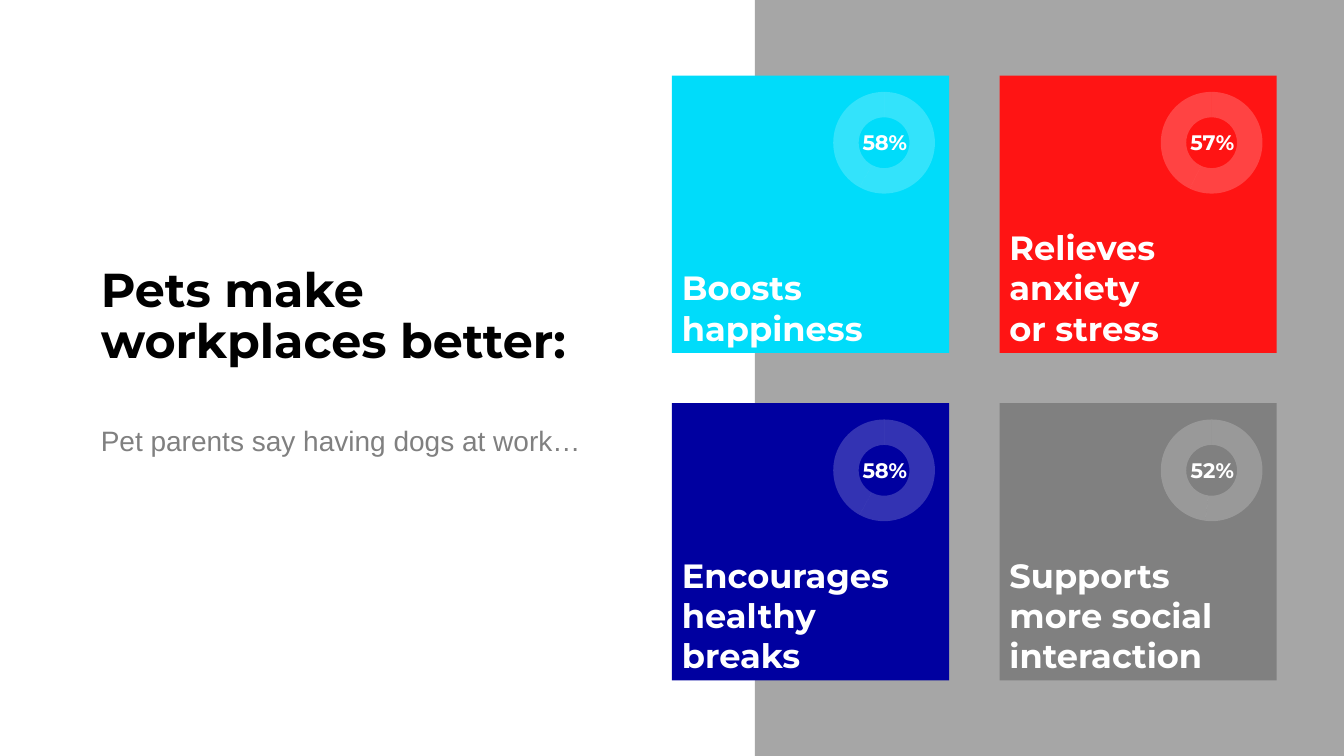
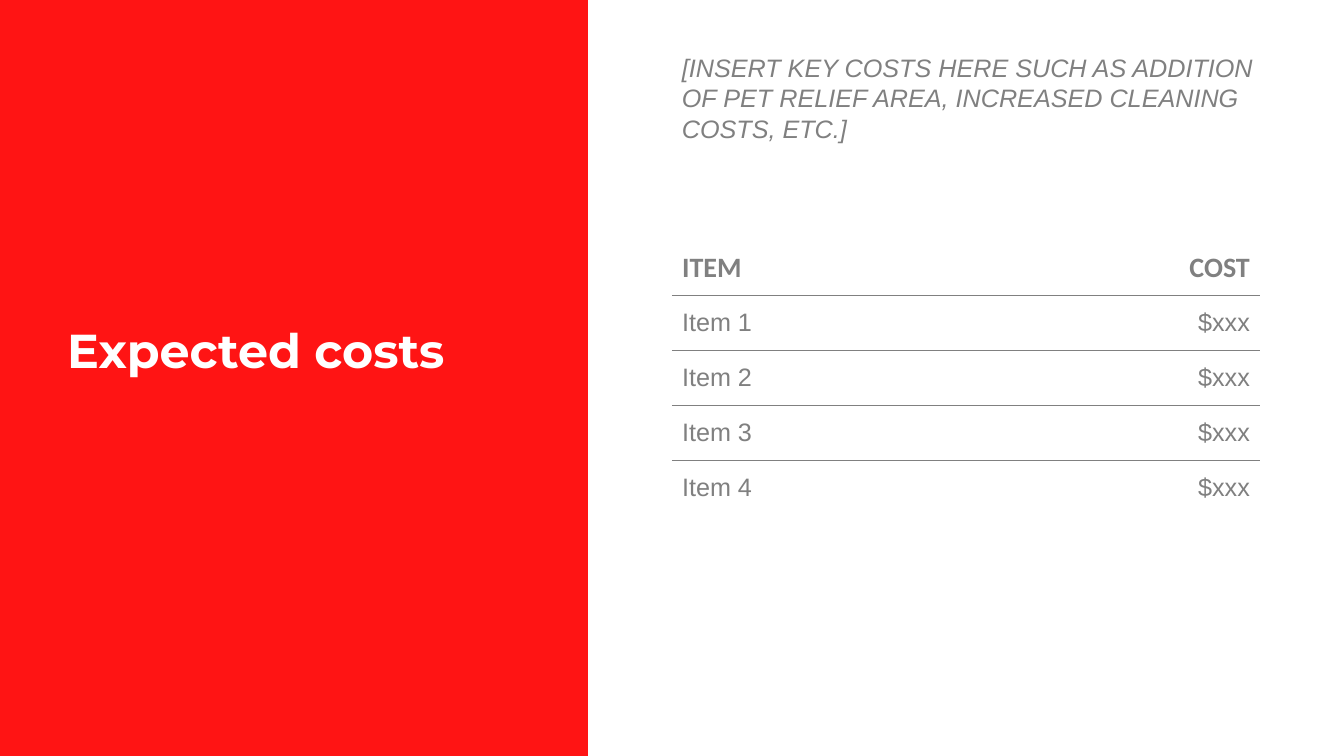
import pptx
import pptx.chart.data
import pptx.dml.color
import pptx.enum.chart
import pptx.enum.shapes
import pptx.enum.text
import pptx.oxml
import pptx.oxml.ns
import pptx.util

Pt = pptx.util.Pt
ALIGN = pptx.enum.text.PP_ALIGN
ANCHOR = pptx.enum.text.MSO_ANCHOR

WIDTH, HEIGHT = 960, 540
BLACK, WHITE, GRAY, SILVER = "000000", "FFFFFF", "808080", "A6A6A6"
CYAN, RED, NAVY = "00DCFA", "FF1414", "0000A0"
HEADING_FONT, BODY_FONT, TABLE_FONT = "Montserrat", "Arial", "Calibri"
TITLE = dict(size=34, font=HEADING_FONT, bold=True, line=36, after=40)
NO_STYLE = "{2D5ABB26-0587-4C30-8999-92F81FD0307C}"

COLUMN_X = 480
TILE, TILE_TOP, TILE_GAP = 198, 54, 36
RING, RING_CENTER_X = 72.7, 151.5
CHART_HEIGHT, CHART_TOP = 92, 2
CHART_WIDTHS, LABEL_WIDTHS = (138, 120), (68, 59)
TILES = [
    ("Boosts\nhappiness", 58, CYAN),
    ("Relieves\nanxiety\nor stress", 57, RED),
    ("Encourages\nhealthy breaks", 58, NAVY),
    ("Supports\nmore social interaction", 52, GRAY),
]
COSTS = [("ITEM", "COST")] + [(f"Item {number}", "$xxx") for number in range(1, 5)]


def rgb(color):
    return pptx.dml.color.RGBColor.from_string(color)


def xml(tag, content, attributes=""):
    """Parse one element of the a: or c: namespace."""
    names = pptx.oxml.ns.nsdecls("a", "c")
    return pptx.oxml.parse_xml(f"<{tag} {names} {attributes}>{content}</{tag}>")


def write(paragraph, text, size=18, font=BODY_FONT, color=GRAY, bold=False,
          italic=False, align=ALIGN.LEFT, line=None, after=0):
    paragraph.text = text
    paragraph.alignment = align
    paragraph.space_after = Pt(after)
    if line:
        paragraph.line_spacing = Pt(line)
    for span in paragraph.runs:
        span.font.size = Pt(size)
        span.font.name = font
        span.font.bold = bold
        span.font.italic = italic
        span.font.color.rgb = rgb(color)


def add_rectangle(page, left, top, width, height, color):
    box = page.shapes.add_shape(pptx.enum.shapes.MSO_SHAPE.RECTANGLE,
                                Pt(left), Pt(top), Pt(width), Pt(height))
    box.shadow.inherit = False
    box.fill.solid()
    box.fill.fore_color.rgb = rgb(color)
    box.line.fill.background()
    return box


def add_text(page, left, top, width, height, inset=True):
    box = page.shapes.add_textbox(Pt(left), Pt(top), Pt(width), Pt(height))
    frame = box.text_frame
    frame.word_wrap = True
    if not inset:
        frame.margin_left = frame.margin_right = 0
        frame.margin_top = frame.margin_bottom = 0
    return frame


def add_ring(page, left, top, width, percent):
    """Add a doughnut of translucent white, its ring centred in the frame."""
    data = pptx.chart.data.CategoryChartData()
    data.categories = ["1", "2"]
    data.add_series("Series 1", (percent, 100 - percent))
    chart = page.shapes.add_chart(
        pptx.enum.chart.XL_CHART_TYPE.DOUGHNUT,
        Pt(left), Pt(top), Pt(width), Pt(CHART_HEIGHT), data).chart
    chart.has_legend = False
    chart.has_title = False
    chart.font.size = Pt(10)
    chart.font.name = TABLE_FONT
    chart.font.color.rgb = rgb(BLACK)
    plot = chart.plots[0]
    plot.vary_by_categories = False
    for index in range(2):
        look = plot.series[0].points[index].format
        look.line.fill.background()
        look.fill.solid()
        look.fill.fore_color.rgb = rgb(WHITE)
        paint = look.fill._xPr.find(".//" + pptx.oxml.ns.qn("a:srgbClr"))
        paint.append(xml("a:alpha", "", 'val="20000"'))

    space = chart._chartSpace
    space.chart.addnext(xml("c:spPr", "<a:noFill/><a:ln><a:noFill/></a:ln>"))
    for hole in space.iter(pptx.oxml.ns.qn("c:holeSize")):
        hole.set("val", "75")
    w, h = RING / width, RING / CHART_HEIGHT
    values = dict(x=(1 - w) / 2, y=(1 - h) / 2, w=w, h=h)
    place = '<c:layoutTarget val="inner"/><c:xMode val="edge"/><c:yMode val="edge"/>'
    place += "".join(f'<c:{key} val="{value:.4f}"/>' for key, value in values.items())
    area = space.chart.plotArea
    for layout in area.findall(pptx.oxml.ns.qn("c:layout")):
        area.remove(layout)
    area.insert(0, xml("c:layout", f"<c:manualLayout>{place}</c:manualLayout>"))


def add_tile(page, index, text, percent, color):
    row, column = divmod(index, 2)
    left = COLUMN_X + column * (TILE + TILE_GAP)
    top = TILE_TOP + row * (TILE + TILE_GAP)
    frame = add_rectangle(page, left, top, TILE, TILE, color).text_frame
    frame.word_wrap = True
    frame.vertical_anchor = ANCHOR.BOTTOM
    write(frame.paragraphs[0], text, size=24, font=HEADING_FONT, color=WHITE, bold=True)

    center = left + RING_CENTER_X
    chart_width, label_width = CHART_WIDTHS[column], LABEL_WIDTHS[column]
    add_ring(page, center - chart_width / 2, top + CHART_TOP, chart_width, percent)
    label = add_text(page, center + 0.5 - label_width / 2, top + 35, label_width, 29.5)
    write(label.paragraphs[0], f"{percent}%", size=15, font=HEADING_FONT,
          color=WHITE, bold=True, align=ALIGN.CENTER)


def add_cost_table(page, left, top, widths, row_height):
    table = page.shapes.add_table(
        len(COSTS), len(widths), Pt(left), Pt(top),
        Pt(sum(widths)), Pt(row_height * len(COSTS))).table
    table.first_row = table.horz_banding = False
    table._tbl.tblPr.find(pptx.oxml.ns.qn("a:tableStyleId")).text = NO_STYLE
    for column, width in zip(table.columns, widths):
        column.width = Pt(width)
    for row_index, values in enumerate(COSTS):
        table.rows[row_index].height = Pt(row_height)
        style = dict(size=20, font=TABLE_FONT, bold=True) if row_index == 0 else {}
        for column_index, value in enumerate(values):
            cell = table.cell(row_index, column_index)
            cell.vertical_anchor = ANCHOR.MIDDLE
            cell.fill.background()
            write(cell.text_frame.paragraphs[0], value,
                  align=(ALIGN.LEFT, ALIGN.RIGHT)[column_index], **style)
            if row_index < len(COSTS) - 1:
                rule = f'<a:solidFill><a:srgbClr val="{GRAY}"/></a:solidFill>'
                cell._tc.get_or_add_tcPr().insert(0, xml("a:lnB", rule, 'w="12700"'))


def build_benefits(page):
    add_rectangle(page, 539.3, 0, WIDTH - 539.3, HEIGHT, SILVER)
    frame = add_text(page, 72, 190.8, 371.5, 137.5, inset=False)
    write(frame.paragraphs[0], "Pets make workplaces better:", color=BLACK, **TITLE)
    write(frame.add_paragraph(), "Pet parents say having dogs at work…", size=20, line=24)
    for index, tile in enumerate(TILES):
        add_tile(page, index, *tile)


def build_costs(page):
    add_rectangle(page, 0, 0, 420, HEIGHT, RED)
    title = add_text(page, 48, 234, 340, 36, inset=False)
    write(title.paragraphs[0], "Expected costs", color=WHITE, **TITLE)
    note = add_text(page, COLUMN_X, 34, 429, 72.7)
    write(note.paragraphs[0],
          "[INSERT KEY COSTS HERE SUCH AS ADDITION OF PET RELIEF AREA, "
          "INCREASED CLEANING COSTS, ETC.]", italic=True)
    add_cost_table(page, COLUMN_X, 171.5, (330, 90), 39.4)


def main():
    deck = pptx.Presentation()
    deck.slide_width, deck.slide_height = Pt(WIDTH), Pt(HEIGHT)
    for build in (build_benefits, build_costs):
        build(deck.slides.add_slide(deck.slide_layouts[6]))
    deck.save("out.pptx")


if __name__ == "__main__":
    main()
